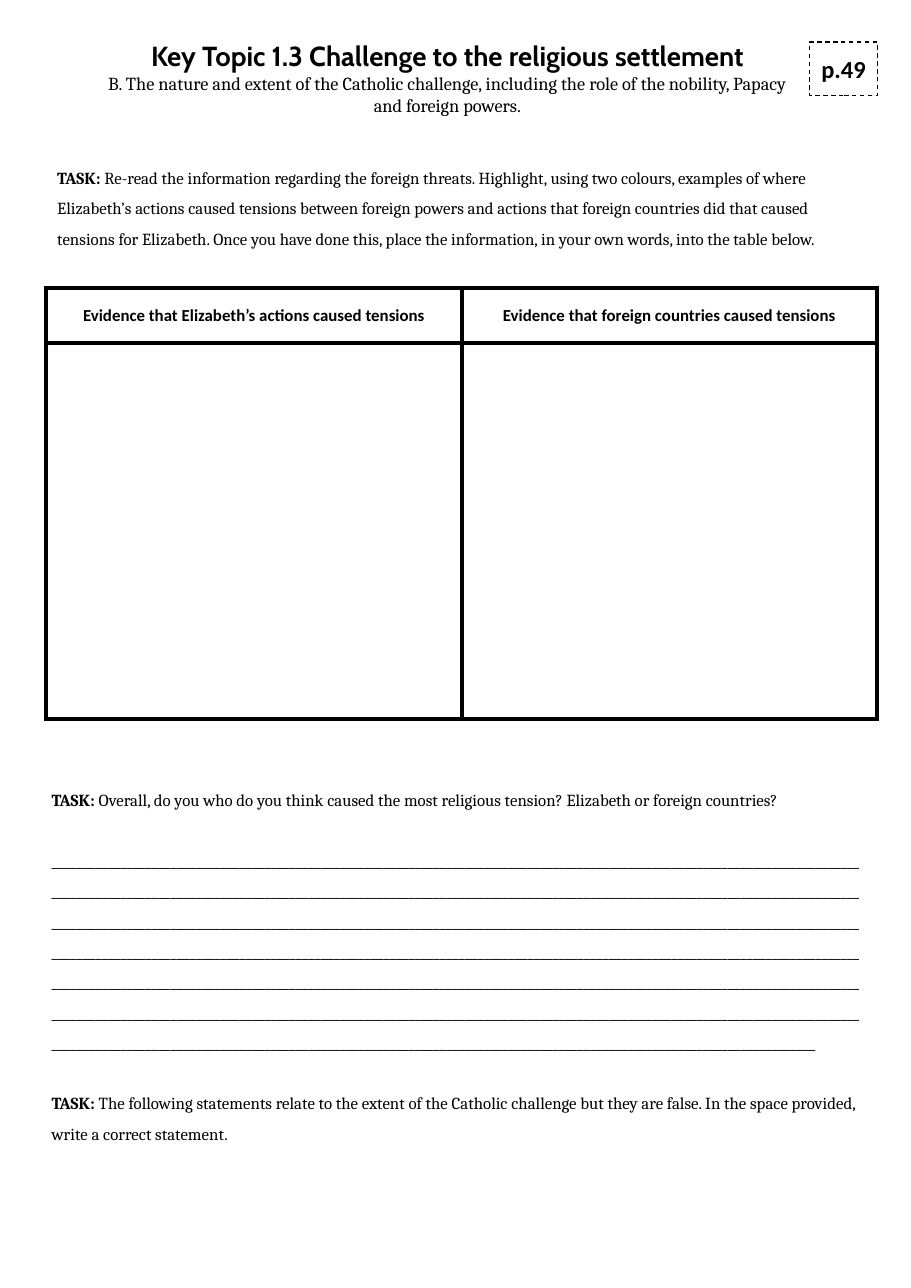
from lxml.etree import SubElement
from pptx import Presentation
from pptx.dml.color import RGBColor
from pptx.enum.dml import MSO_LINE
from pptx.enum.shapes import MSO_SHAPE
from pptx.enum.text import MSO_ANCHOR, PP_ALIGN
from pptx.oxml.ns import qn
from pptx.util import Cm, Pt

BLACK = RGBColor(0, 0, 0)
WHITE = RGBColor(255, 255, 255)

# Formats
TITLE = {"name": "Cabin", "size": Pt(18), "bold": True}
SUBTITLE = {"name": "Cambria", "size": Pt(12), "bold": False}
PAGE = {"name": "Calibri", "size": Pt(16), "bold": True}
HEADER = {"name": "Calibri", "size": Pt(11), "bold": True}
BODY = {"name": "Cambria", "size": Pt(11), "bold": False}
LABEL = {**BODY, "bold": True}
CENTRED = {"alignment": PP_ALIGN.CENTER}
SPACED = {"line_spacing": 1.5}
SPACED_AFTER_GAP = {**SPACED, "space_before": Pt(19.8)}

# Content: each paragraph is a layout and a list of (text, font) runs
TASK = ("TASK: ", LABEL)
ANSWER_LINE_LENGTH = 896
HEADING = [
    (CENTRED, [("Key Topic 1.3 Challenge to the religious settlement", TITLE)]),
    (CENTRED, [("B. The nature and extent of the Catholic challenge, including the "
                "role of the nobility, Papacy and foreign powers.", SUBTITLE)]),
]
PAGE_REFERENCE = [(CENTRED, [("p.49", PAGE)])]
READING_TASK = [
    (SPACED, [TASK, (
        "Re-read the information regarding the foreign threats. Highlight, using two "
        "colours, examples of where Elizabeth’s actions caused tensions between foreign "
        "powers and actions that foreign countries did that caused tensions for "
        "Elizabeth. Once you have done this, place the information, in your own words, "
        "into the table below.", BODY)]),
]
WRITING_TASKS = [
    (SPACED, [TASK, ("Overall, do you who do you think caused the most religious "
                     "tension? Elizabeth or foreign countries?", BODY)]),
    (SPACED_AFTER_GAP, [("_" * ANSWER_LINE_LENGTH, BODY)]),
    (SPACED_AFTER_GAP, [TASK, (
        "The following statements relate to the extent of the Catholic challenge but "
        "they are false. In the space provided, write a correct statement.", BODY)]),
]
TABLE_HEADERS = ["Evidence that Elizabeth’s actions caused tensions",
                 "Evidence that foreign countries caused tensions"]

# Places in centimetres: left, top, width, height
HEADING_BOX = (1.96, 0.94, 16.71, 1.7)
PAGE_BOX = (18.67, 0.97, 1.55, 1.24)
READING_BOX = (1.07, 3.51, 19.15, 2.29)
TABLE_BOX = (1.07, 6.65, 19.15, 9.93)
WRITING_BOX = (0.94, 17.86, 19.15, 8.64)
HEADER_HEIGHT = 1.27


def place(box):
    return [Cm(length) for length in box]


def set_attributes(target, values):
    for name, value in values.items():
        setattr(target, name, value)


def write(text_frame, paragraphs):
    for index, (layout, runs) in enumerate(paragraphs):
        paragraph = text_frame.add_paragraph() if index else text_frame.paragraphs[0]
        set_attributes(paragraph, layout)
        for text, font in runs:
            run = paragraph.add_run()
            run.text = text
            set_attributes(run.font, font)
            run.font.color.rgb = BLACK


def add_text(slide, box, paragraphs, anchor=MSO_ANCHOR.TOP):
    text_frame = slide.shapes.add_textbox(*place(box)).text_frame
    text_frame.word_wrap = True
    text_frame.vertical_anchor = anchor
    write(text_frame, paragraphs)
    return text_frame


def add_borders(cell):
    properties = cell._tc.get_or_add_tcPr()
    for index, side in enumerate(("lnL", "lnR", "lnT", "lnB")):
        line = properties.makeelement(qn(f"a:{side}"), {"w": str(Pt(3))})
        properties.insert(index, line)
        fill = SubElement(line, qn("a:solidFill"))
        SubElement(fill, qn("a:srgbClr"), val=str(BLACK))


presentation = Presentation()
presentation.slide_width, presentation.slide_height = Cm(21), Cm(29.7)
slide = presentation.slides.add_slide(presentation.slide_layouts[6])

# Heading
heading = add_text(slide, HEADING_BOX, HEADING, MSO_ANCHOR.MIDDLE)
heading.margin_top = heading.margin_bottom = Cm(0.25)

# Page reference
page = slide.shapes.add_shape(MSO_SHAPE.RECTANGLE, *place(PAGE_BOX))
page.shadow.inherit = False
page.fill.solid()
page.fill.fore_color.rgb = WHITE
page.line.color.rgb = BLACK
set_attributes(page.line, {"width": Pt(0.75), "dash_style": MSO_LINE.DASH})
page.text_frame.vertical_anchor = MSO_ANCHOR.MIDDLE
write(page.text_frame, PAGE_REFERENCE)

# Tasks
add_text(slide, READING_BOX, READING_TASK)
add_text(slide, WRITING_BOX, WRITING_TASKS)

# Evidence table
table = slide.shapes.add_table(2, len(TABLE_HEADERS), *place(TABLE_BOX)).table
set_attributes(table, {"first_row": False, "horz_banding": False})
table.rows[0].height = Cm(HEADER_HEIGHT)
table.rows[1].height = Cm(TABLE_BOX[3] - HEADER_HEIGHT)
for cell in table.iter_cells():
    cell.fill.background()
    add_borders(cell)
for cell, header in zip(table.rows[0].cells, TABLE_HEADERS):
    cell.vertical_anchor = MSO_ANCHOR.MIDDLE
    write(cell.text_frame, [(CENTRED, [(header, HEADER)])])

presentation.save("out.pptx")
